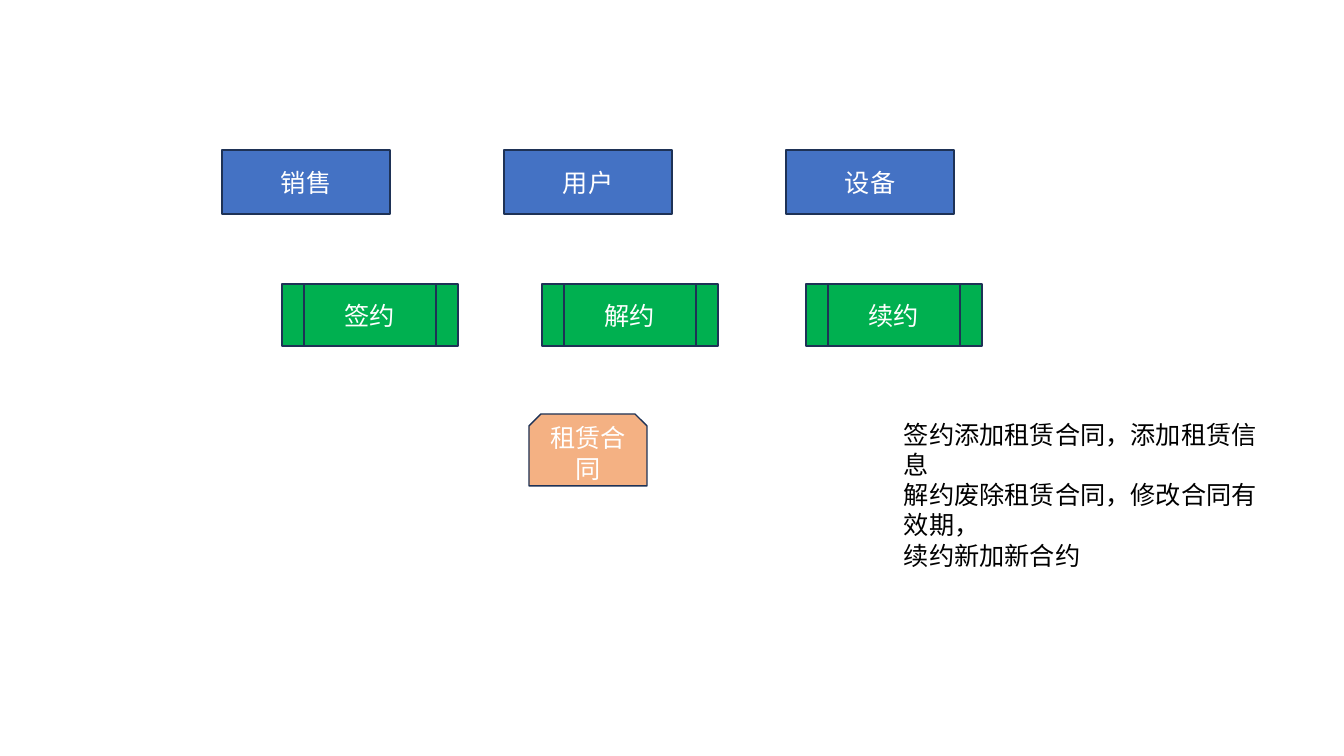
from dataclasses import dataclass

from pptx import Presentation
from pptx import util as u
from pptx.dml.color import RGBColor
from pptx.enum import shapes, text

ENTITIES = ["销售", "用户", "设备"]
ACTIONS = [("签约", 282), ("解约", 542), ("续约", 806)]  # label, left px
CONTRACT = "租赁合同"
NOTES = [
    "签约添加租赁合同，添加租赁信息",
    "解约废除租赁合同，修改合同有效期，",
    "续约新加新合约",
]


@dataclass(frozen=True)
class Theme:
    font: str = "Calibri"
    size: int = 18
    entity: str = "4472C4"
    action: str = "00B050"
    contract: str = "F4B183"
    outline: str = "1E3256"
    light: str = "FFFFFF"
    dark: str = "000000"


THEME = Theme()
EMU_PER_PX = 914400 / 100.8
SLIDE_W, SLIDE_H = 1344, 756
ENTITY_LEFT, ENTITY_PITCH = 222, 282


def px(n):
    return u.Emu(round(n * EMU_PER_PX))


def add_run(p, words, color):
    r = p.add_run()
    r.text = words
    r.font.name = THEME.font
    r.font.size = u.Pt(THEME.size)
    r.font.color.rgb = RGBColor.from_string(color)


def add_box(s, kind, label, box, fill):
    """Add an outlined preset shape with a centred label; box is in px."""
    sp = s.shapes.add_shape(kind, *map(px, box))
    sp.shadow.inherit = False
    sp.fill.solid()
    sp.fill.fore_color.rgb = RGBColor.from_string(fill)
    sp.line.color.rgb = RGBColor.from_string(THEME.outline)
    sp.line.width = u.Pt(1)
    tf = sp.text_frame
    tf.word_wrap = True
    tf.vertical_anchor = text.MSO_ANCHOR.MIDDLE
    p = tf.paragraphs[0]
    p.alignment = text.PP_ALIGN.CENTER
    add_run(p, label, THEME.light)


def add_notes(s, lines, box):
    tf = s.shapes.add_textbox(*map(px, box)).text_frame
    tf.word_wrap = True
    tf.auto_size = text.MSO_AUTO_SIZE.SHAPE_TO_FIT_TEXT
    for i, line in enumerate(lines):
        p = tf.add_paragraph() if i else tf.paragraphs[0]
        add_run(p, line, THEME.dark)


def main():
    prs = Presentation()
    prs.slide_width, prs.slide_height = px(SLIDE_W), px(SLIDE_H)
    s = prs.slides.add_slide(prs.slide_layouts[6])
    kinds = shapes.MSO_SHAPE

    for i, label in enumerate(ENTITIES):
        left = ENTITY_LEFT + i * ENTITY_PITCH
        add_box(s, kinds.RECTANGLE, label, (left, 150, 168, 64), THEME.entity)
    for label, left in ACTIONS:
        add_box(s, kinds.FLOWCHART_PREDEFINED_PROCESS, label,
                (left, 284, 176, 62), THEME.action)
    add_box(s, kinds.SNIP_2_SAME_RECTANGLE, CONTRACT,
            (529, 414, 118, 72), THEME.contract)
    add_notes(s, NOTES, (894, 414, 385, 163))

    prs.save("out.pptx")


if __name__ == "__main__":
    main()
